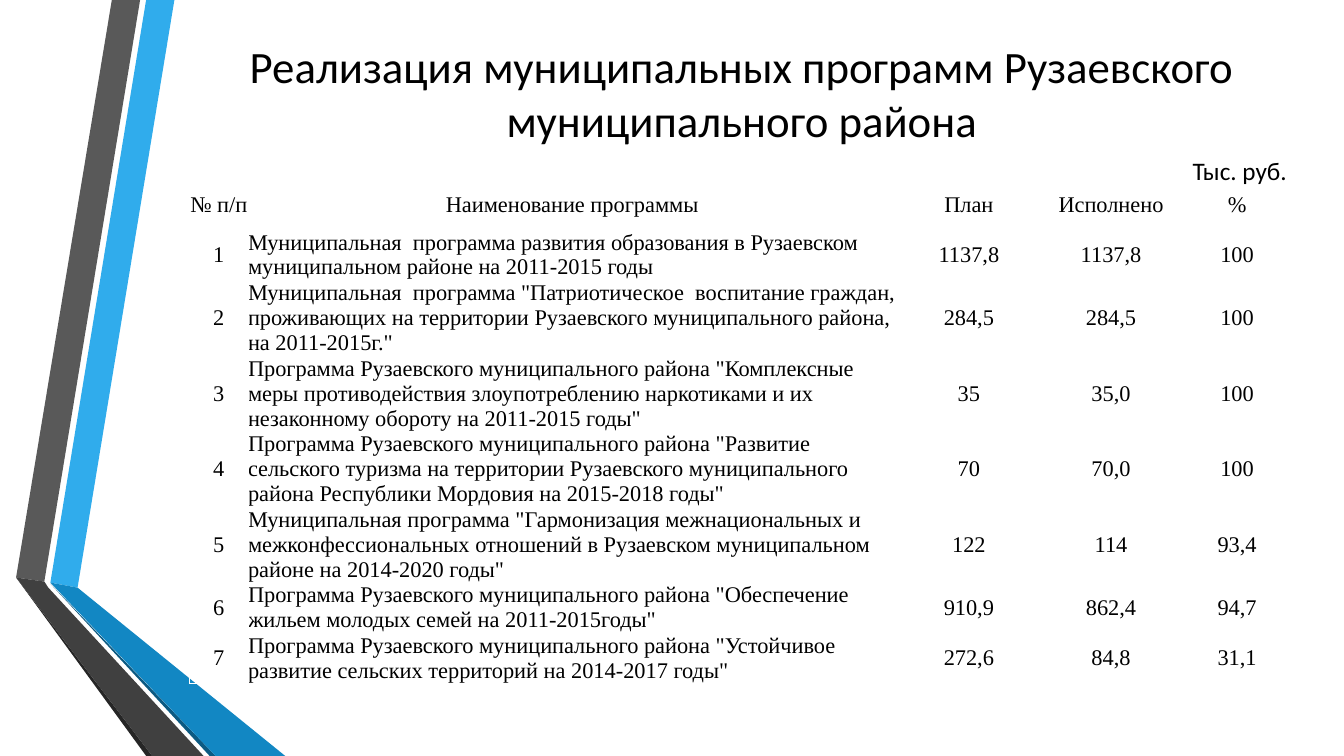
"""Build the slide on municipal programme results with its table and ribbon."""
from typing import NamedTuple

from lxml import etree
from pptx import Presentation
from pptx.dml.color import RGBColor
from pptx.enum.text import MSO_ANCHOR, PP_ALIGN
from pptx.oxml.ns import qn
from pptx.slide import Slide
from pptx.table import _Cell
from pptx.text.text import TextFrame
from pptx.util import Inches, Pt

LEFT, CENTER = PP_ALIGN.LEFT, PP_ALIGN.CENTER
TOP, MIDDLE = MSO_ANCHOR.TOP, MSO_ANCHOR.MIDDLE
BODY_FONT, TABLE_FONT = "Calibri", "Times New Roman"
BLACK, WHITE = "000000", "FFFFFF"
TABLE_LEFT, TABLE_TOP = 1.88, 1.91
COLUMN_WIDTHS = (0.58, 6.43, 1.44, 1.38, 1.12)
HEADER_HEIGHT, LINE_HEIGHT = 0.37, 0.25
HEADINGS = ("№ п/п", "Наименование программы", "План", "Исполнено", "%")


class Band(NamedTuple):
    color: str
    points: tuple[tuple[float, float], ...]


class Program(NamedTuple):
    name: str
    plan: str
    actual: str
    percent: str
    lines: int


class Label(NamedTuple):
    text: str
    left: float
    top: float
    width: float
    height: float
    size: int
    align: PP_ALIGN
    wrap: bool


BANDS = (
    Band("30ACEC", ((0.5, 5.78), (0.77, 5.83), (1.73, 0), (1.45, 0))),
    Band("595959", ((1.39, 0), (1.11, 0), (0.16, 5.73), (0.44, 5.77))),
    Band("262626", ((0.16, 5.73), (1.45, 7.5), (1.51, 7.5))),
    Band("0C5A82", ((0.5, 5.79), (2.08, 7.5), (2.14, 7.5))),
    Band("1287C3", ((0.5, 5.78), (2.14, 7.5), (2.83, 7.5), (0.77, 5.83))),
    Band("404040", ((2.02, 7.5), (0.48, 5.83), (0.44, 5.77), (0.16, 5.73), (1.51, 7.5))),
)

PROGRAMS = (
    Program("Муниципальная  программа развития образования в Рузаевском "
            "муниципальном районе на 2011-2015 годы", "1137,8", "1137,8", "100", 2),
    Program("Муниципальная  программа \"Патриотическое  воспитание граждан, проживающих "
            "на территории Рузаевского муниципального района, на 2011-2015г.\"",
            "284,5", "284,5", "100", 3),
    Program("Программа Рузаевского муниципального района \"Комплексные меры противодействия "
            "злоупотреблению наркотиками и их незаконному обороту на 2011-2015 годы\"",
            "35", "35,0", "100", 3),
    Program("Программа Рузаевского муниципального района \"Развитие сельского туризма на "
            "территории Рузаевского муниципального района Республики Мордовия "
            "на 2015-2018 годы\"", "70", "70,0", "100", 3),
    Program("Муниципальная программа \"Гармонизация межнациональных и межконфессиональных "
            "отношений в Рузаевском муниципальном районе на 2014-2020 годы\"",
            "122", "114", "93,4", 3),
    Program("Программа Рузаевского муниципального района \"Обеспечение жильем молодых "
            "семей на 2011-2015годы\"", "910,9", "862,4", "94,7", 2),
    Program("Программа Рузаевского муниципального района \"Устойчивое развитие сельских "
            "территорий на 2014-2017 годы\"", "272,6", "84,8", "31,1", 2),
)

LABELS = (
    Label("Реализация муниципальных программ Рузаевского муниципального района",
          1.88, 0.26, 10.96, 1.32, 32, CENTER, True),
    Label("Тыс. руб.", 11.73, 1.49, 1.17, 0.4, 18, LEFT, False),
)


def rgb(color: str) -> RGBColor:
    return RGBColor.from_string(color)


def write_text(text_frame: TextFrame, text: str, font: str, size: int, align: PP_ALIGN) -> None:
    text_frame.text = text
    paragraph = text_frame.paragraphs[0]
    paragraph.alignment = align
    run_font = paragraph.runs[0].font
    run_font.name = font
    run_font.size = Pt(size)
    run_font.color.rgb = rgb(BLACK)


def draw_band(slide: Slide, band: Band) -> None:
    corners = [(Inches(x), Inches(y)) for x, y in band.points]
    builder = slide.shapes.build_freeform(*corners[0])
    builder.add_line_segments(corners[1:], close=True)
    shape = builder.convert_to_shape()
    shape.shadow.inherit = False
    shape.fill.solid()
    shape.fill.fore_color.rgb = rgb(band.color)
    shape.line.fill.background()


def draw_label(slide: Slide, label: Label) -> None:
    box = slide.shapes.add_textbox(
        Inches(label.left), Inches(label.top), Inches(label.width), Inches(label.height))
    text_frame = box.text_frame
    text_frame.word_wrap = label.wrap
    text_frame.vertical_anchor = MIDDLE
    write_text(text_frame, label.text, BODY_FONT, label.size, label.align)


def add_borders(cell: _Cell, color: str) -> None:
    properties = cell._tc.get_or_add_tcPr()
    for side in ("a:lnL", "a:lnR", "a:lnT", "a:lnB"):
        line = etree.SubElement(properties, qn(side), w=str(Pt(1)))
        fill = etree.SubElement(line, qn("a:solidFill"))
        etree.SubElement(fill, qn("a:srgbClr"), val=color)


def fill_cell(cell: _Cell, text: str, align: PP_ALIGN, anchor: MSO_ANCHOR) -> None:
    cell.margin_left = cell.margin_right = cell.margin_top = cell.margin_bottom = 0
    cell.vertical_anchor = anchor
    add_borders(cell, WHITE)
    cell.fill.background()
    write_text(cell.text_frame, text, TABLE_FONT, 16, align)


def draw_table(slide: Slide, programs: tuple[Program, ...]) -> None:
    heights = [HEADER_HEIGHT] + [LINE_HEIGHT * program.lines for program in programs]
    table = slide.shapes.add_table(
        len(heights), len(COLUMN_WIDTHS), Inches(TABLE_LEFT), Inches(TABLE_TOP),
        Inches(sum(COLUMN_WIDTHS)), Inches(sum(heights))).table
    table.first_row = table.horz_banding = False
    for column, width in zip(table.columns, COLUMN_WIDTHS):
        column.width = Inches(width)
    for row, height in zip(table.rows, heights):
        row.height = Inches(height)
    for column, heading in enumerate(HEADINGS):
        fill_cell(table.cell(0, column), heading, CENTER, TOP)
    for number, program in enumerate(programs, start=1):
        values = (str(number), program.name, program.plan, program.actual, program.percent)
        for column, value in enumerate(values):
            align = LEFT if column == 1 else CENTER
            fill_cell(table.cell(number, column), value, align, MIDDLE)


def main() -> None:
    presentation = Presentation()
    presentation.slide_width = Inches(13.33)
    presentation.slide_height = Inches(7.5)
    slide = presentation.slides.add_slide(presentation.slide_layouts[6])
    for band in BANDS:
        draw_band(slide, band)
    draw_table(slide, PROGRAMS)
    for label in LABELS:
        draw_label(slide, label)
    presentation.save("out.pptx")


if __name__ == "__main__":
    main()
